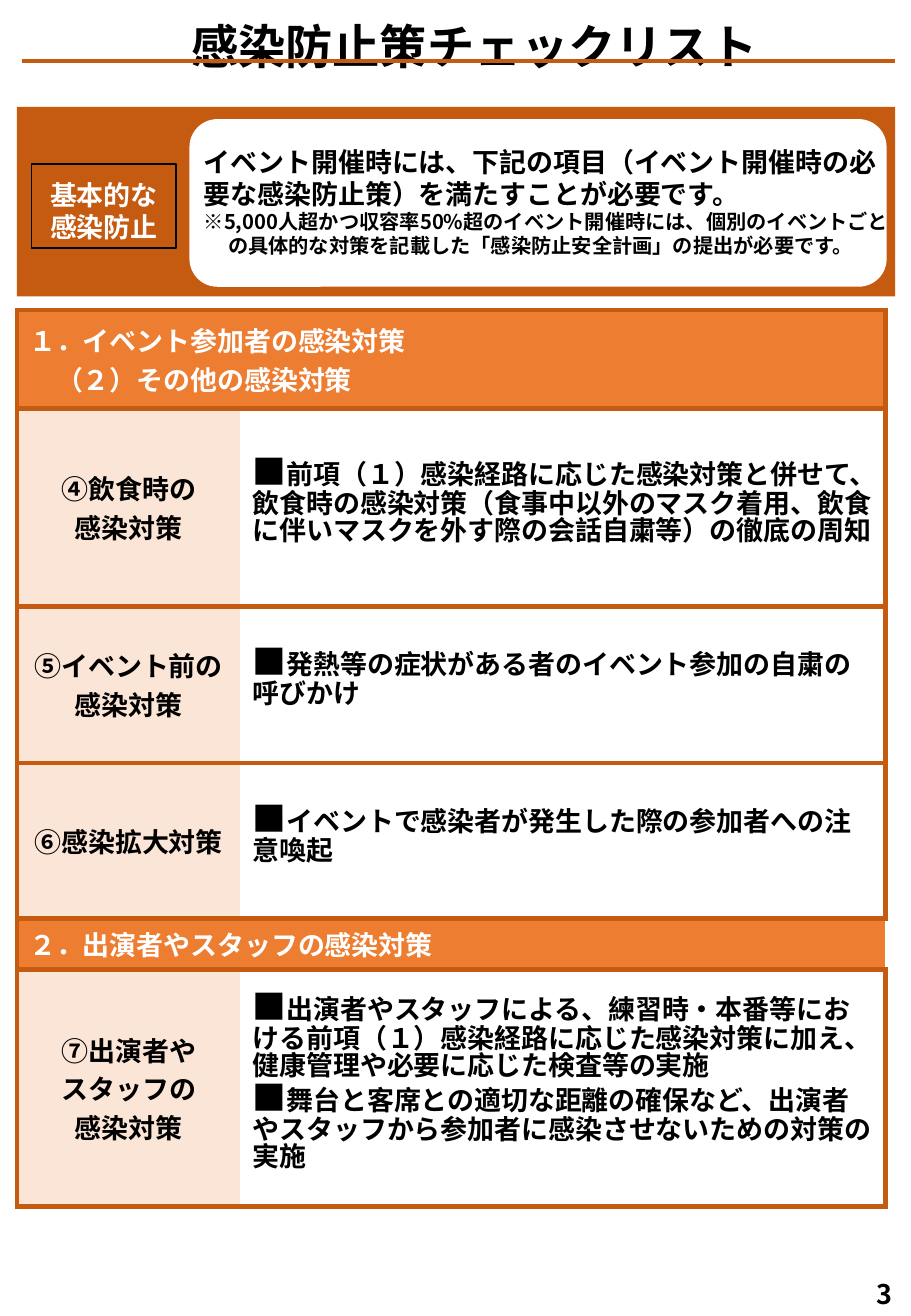
from lxml import etree
from pptx import Presentation
from pptx import util as u
from pptx.dml.color import RGBColor
from pptx.enum import shapes, text
from pptx.oxml.ns import qn

COLORS = {"rust": "C55A11", "orange": "ED7D31", "peach": "FBE5D6",
          "white": "FFFFFF", "black": "000000"}
GOTHIC = "Noto Sans CJK JP"
CENTER = text.PP_ALIGN.CENTER
MIDDLE = text.MSO_ANCHOR.MIDDLE

COLUMNS = [1.84, 5.31]
CHECKLIST = [
    (0.81, "１．イベント参加者の感染対策\n　（２）その他の感染対策", []),
    (1.63, "④飲食時の\n感染対策",
     ["前項（１）感染経路に応じた感染対策と併せて、飲食時の感染対策（食事中以外のマスク着用、"
      "飲食に伴いマスクを外す際の会話自粛等）の徹底の周知"]),
    (1.29, "⑤イベント前の感染対策",
     ["発熱等の症状がある者のイベント参加の自粛の呼びかけ"]),
    (1.28, "⑥感染拡大対策",
     ["イベントで感染者が発生した際の参加者への注意喚起"]),
    (0.42, "２．出演者やスタッフの感染対策", []),
    (1.95, "⑦出演者や\nスタッフの\n感染対策",
     ["出演者やスタッフによる、練習時・本番等における前項（１）感染経路に応じた感染対策に加え、"
      "健康管理や必要に応じた検査等の実施",
      "舞台と客席との適切な距離の確保など、出演者やスタッフから参加者に感染させないための対策の実施"]),
]


def rgb(name):
    return RGBColor.from_string(COLORS[name])


def inches(*lengths):
    return [u.Inches(length) for length in lengths]


def style_run(run, size=16, color="black", face=GOTHIC):
    run.font.size = u.Pt(size)
    run.font.bold = True
    run.font.name = face
    run.font.color.rgb = rgb(color)
    etree.SubElement(run.font._element, qn("a:ea"), typeface=GOTHIC)


def style_frame(frame, size=16, color="black", face=GOTHIC, align=None, spacing=None):
    for paragraph in frame.paragraphs:
        paragraph.alignment = align
        if spacing:
            paragraph.line_spacing = u.Pt(spacing)
        for run in paragraph.runs:
            style_run(run, size, color, face)


def add_text(slide, box, words, **style):
    frame = slide.shapes.add_textbox(*inches(*box)).text_frame
    frame.word_wrap = True
    frame.text = words
    style_frame(frame, **style)
    return frame


def add_box(slide, box, kind, fill=None, line=None):
    shape = slide.shapes.add_shape(kind, *inches(*box))
    shape.shadow.inherit = False
    if fill:
        shape.fill.solid()
        shape.fill.fore_color.rgb = rgb(fill)
    else:
        shape.fill.background()
    if line:
        shape.line.color.rgb = rgb(line)
        shape.line.width = u.Pt(1)
    else:
        shape.line.fill.background()
    return shape


def add_title(slide, left, top, width, height):
    add_text(slide, (left, top, width, height), "感染防止策チェックリスト",
             size=28, align=CENTER, spacing=36)
    rule_y = top + 0.44
    rule = slide.shapes.add_connector(
        shapes.MSO_CONNECTOR.STRAIGHT,
        *inches(left + 0.41, rule_y, left + 7.6, rule_y))
    rule.line.color.rgb = rgb("rust")
    rule.line.width = u.Pt(2.25)
    etree.SubElement(rule._element.spPr, qn("a:effectLst"))


def add_banner(slide, left, top, width, height):
    kinds = shapes.MSO_SHAPE
    add_box(slide, (left, top, width, height), kinds.RECTANGLE, "rust")
    add_box(slide, (left + 1.42, top + 0.1, 5.74, 1.38), kinds.ROUNDED_RECTANGLE, "white")

    label = add_box(slide, (left + 0.12, top + 0.47, 1.19, 0.69),
                    kinds.RECTANGLE, line="black").text_frame
    label.word_wrap = True
    label.vertical_anchor = MIDDLE
    label.margin_top = u.Inches(0.13)
    label.text = "基本的な\n感染防止"
    style_frame(label, color="white", align=CENTER, spacing=19)

    notice = add_text(
        slide, (left + 1.44, top + 0.27, 5.84, 1.07),
        "イベント開催時には、下記の項目（イベント開催時の必要な感染防止策）を満たすことが必要です。",
        spacing=19)
    footnote = notice.add_paragraph()
    footnote.text = ("※5,000人超かつ収容率50%超のイベント開催時には、個別のイベントごとの"
                     "具体的な対策を記載した「感染防止安全計画」の提出が必要です。")
    footnote.line_spacing = u.Pt(14.2)
    indent = u.Inches(0.2)
    properties = footnote._p.get_or_add_pPr()
    properties.set("marL", str(indent))
    properties.set("indent", str(-indent))
    style_run(footnote.runs[0], size=12)


def paint_cell(cell, fill, sides):
    cell.fill.solid()
    cell.fill.fore_color.rgb = rgb(fill)
    cell.vertical_anchor = MIDDLE
    properties = cell._tc.get_or_add_tcPr()
    for position, side in enumerate("LRTB"):
        border = etree.Element(qn("a:ln" + side), w=str(u.Pt(3)))
        if side in sides:
            solid = etree.SubElement(border, qn("a:solidFill"))
            etree.SubElement(solid, qn("a:srgbClr"), val=COLORS["rust"])
        else:
            etree.SubElement(border, qn("a:noFill"))
        properties.insert(position, border)


def fill_measures(frame, measures):
    for number, measure in enumerate(measures):
        paragraph = frame.add_paragraph() if number else frame.paragraphs[0]
        paragraph.line_spacing = u.Pt(16)
        paragraph.space_after = u.Pt(6)
        for words, size in (("■", 20), (measure, 16)):
            run = paragraph.add_run()
            run.text = words
            style_run(run, size)


def add_checklist(slide, left, top, width, height):
    table = slide.shapes.add_table(len(CHECKLIST), len(COLUMNS),
                                   *inches(left, top, width, height)).table
    table.first_row = False
    table.horz_banding = False
    for column, column_width in zip(table.columns, COLUMNS):
        column.width = u.Inches(column_width)
    for index, (row_height, heading, measures) in enumerate(CHECKLIST):
        table.rows[index].height = u.Inches(row_height)
        topic, content = table.cell(index, 0), table.cell(index, 1)
        topic.text_frame.text = heading
        if measures:
            style_frame(topic.text_frame, face="Calibri", align=CENTER)
            fill_measures(content.text_frame, measures)
            paint_cell(topic, "peach", "LTB")
            paint_cell(content, "white", "RTB")
        else:
            style_frame(topic.text_frame, color="white", face="Calibri")
            paint_cell(topic, "orange", "LTB" if index else "LRTB")
            paint_cell(content, "orange", "TB" if index else "RTB")
            topic.merge(content)


def add_page_number(slide, left, top, width, height):
    frame = add_text(slide, (left, top, width, height), "3", align=CENTER)
    frame.vertical_anchor = MIDDLE


def main():
    deck = Presentation()
    deck.slide_width, deck.slide_height = inches(7.5, 10.83)
    slide = deck.slides.add_slide(deck.slide_layouts[6])
    add_checklist(slide, 0.14, 2.55, sum(COLUMNS), 7.37)
    add_banner(slide, 0.14, 0.88, 7.23, 1.56)
    add_title(slide, -0.23, 0.06, 8.27, 0.57)
    add_page_number(slide, 6.99, 10.46, 0.59, 0.37)
    deck.save("out.pptx")


if __name__ == "__main__":
    main()
